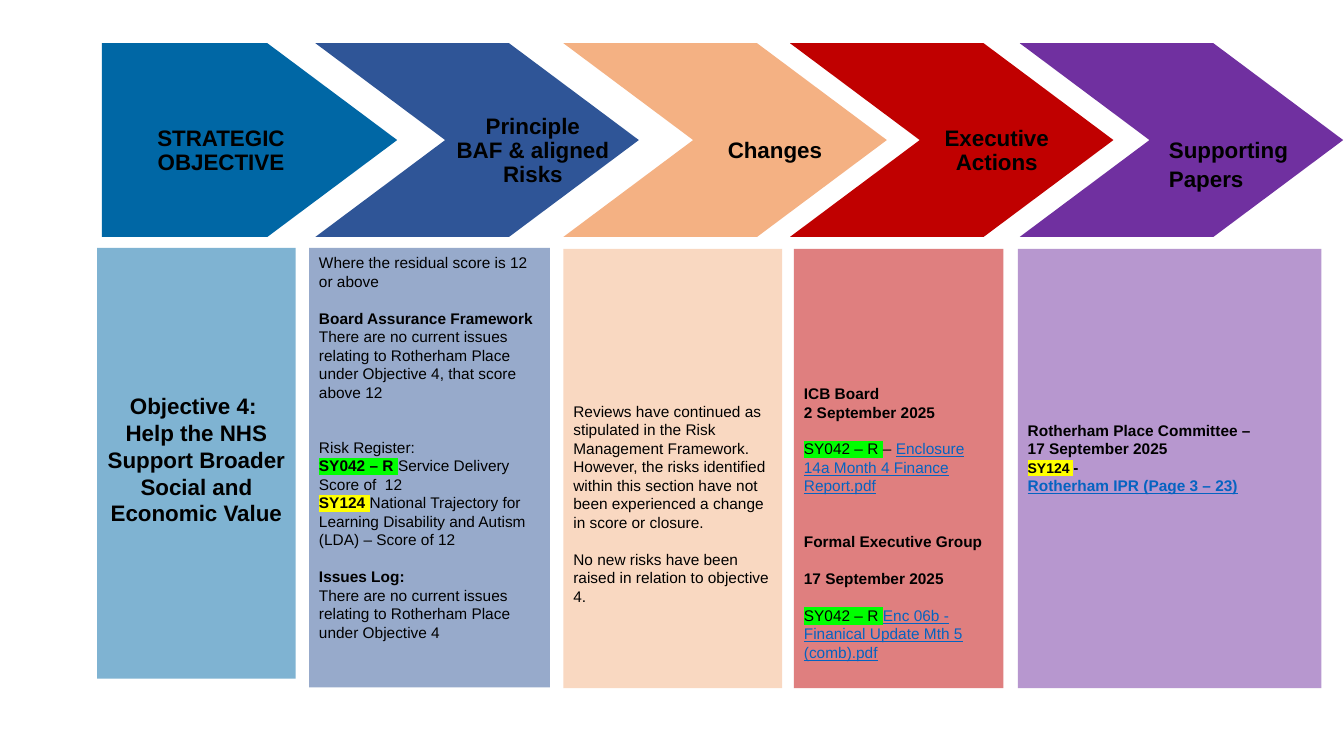
from lxml import etree
from pptx import Presentation
from pptx import util as u
from pptx.dml.color import RGBColor
from pptx.enum import shapes, text
from pptx.oxml.ns import qn

COLOURS = {
    "blue": "0067A5", "navy": "2F5597", "orange": "F4B183", "red": "C00000", "purple": "7030A0",
    "pale blue": "7FB3D2", "pale navy": "97AACB", "pale orange": "F9D8C1",
    "pale red": "DF7F7F", "pale purple": "B797CF",
    "black": "000000", "link": "0563C1", "green": "00FF00", "yellow": "FFFF00",
}
FONT = "Arial"

# Span styles
PLAIN = {}
BOLD = {"bold": True}
LINK = {"colour": "link", "underline": True}
BOLD_LINK = {**LINK, **BOLD}
GREEN = {"highlight": "green"}
GREEN_BOLD = {**GREEN, **BOLD}
YELLOW_BOLD = {"highlight": "yellow", **BOLD}
YELLOW_SMALL = {**YELLOW_BOLD, "size": 10}

# Arrow headings: left, width, colour, text centre x, text centre y, lines
ARROWS = [
    (2.57, 7.44, "blue", 5.57, 3.81, ["STRATEGIC", "OBJECTIVE"]),
    (7.95, 8.15, "navy", 13.43, 3.81, ["Principle", "BAF & aligned", "Risks"]),
    (14.2, 8.15, "orange", 19.53, 3.81, ["Changes"]),
    (19.91, 8.15, "red", 25.12, 3.81, ["Executive", "Actions"]),
    (25.7, 8.15, "purple", 31.11, 4.11, ["Supporting Papers"]),
]
ARROW_TOP, ARROW_HEIGHT, ARROW_POINT = 1.09, 4.88, 0.67

# Panels: left, top, width, height, colour, text top, paragraphs
# Each paragraph: blank lines before it, then its spans
PANELS = [
    (2.45, 6.25, 5.0, 10.85, "pale blue", 9.88, [
        (0, [("Objective 4:  Help the NHS Support Broader Social and Economic Value",
              {**BOLD, "size": 16})]),
    ]),
    (7.79, 6.25, 6.07, 11.07, "pale navy", 6.38, [
        (0, [("Where the residual score is 12 or above", PLAIN)]),
        (1, [("Board Assurance Framework", BOLD)]),
        (0, [("There are no current issues relating to Rotherham Place under Objective 4, "
              "that score above 12", PLAIN)]),
        (2, [("Risk Register:", PLAIN)]),
        (0, [("SY042 – R ", GREEN_BOLD), ("Service Delivery Score of  12", PLAIN)]),
        (0, [("SY124 ", YELLOW_BOLD),
             ("National Trajectory for Learning Disability and Autism (LDA) – Score of 12", PLAIN)]),
        (1, [("Issues Log:", BOLD)]),
        (0, [("There are no current issues relating to Rotherham Place under Objective 4", PLAIN)]),
    ]),
    (14.2, 6.27, 5.51, 11.07, "pale orange", 10.13, [
        (0, [("Reviews have continued as stipulated in the Risk Management Framework. However, "
              "the risks identified within this section have not been experienced a change in "
              "score or closure.", PLAIN)]),
        (1, [("No new risks have been raised in relation to objective 4.", PLAIN)]),
    ]),
    (20.01, 6.27, 5.28, 11.07, "pale red", 9.68, [
        (0, [("ICB Board", BOLD)]),
        (0, [("2 September 2025", BOLD)]),
        (1, [("SY042 – R ", GREEN), ("– ", PLAIN),
             ("Enclosure 14a Month 4 Finance Report.pdf", LINK)]),
        (2, [("Formal Executive Group", BOLD)]),
        (1, [("17 September 2025", BOLD)]),
        (1, [("SY042 – R ", GREEN), ("Enc 06b - Finanical Update Mth 5 (comb).pdf", LINK)]),
    ]),
    (25.65, 6.27, 7.65, 11.07, "pale purple", 10.6, [
        (0, [("Rotherham Place Committee –", BOLD)]),
        (0, [("17 September 2025", BOLD)]),
        (0, [("SY124 ", YELLOW_SMALL), ("-", BOLD)]),
        (0, [("Rotherham IPR (Page 3 – 23)", BOLD_LINK)]),
    ]),
]
BLANK_LINE = 13.2
SIDE_MARGIN = 0.25


def rgb(name):
    return RGBColor.from_string(COLOURS[name])


def add_span(para, words, size=11, bold=False, colour="black", underline=False, highlight=None):
    span = para.add_run()
    span.text = words
    font = span.font
    font.name, font.size, font.bold = FONT, u.Pt(size), bold
    font.color.rgb = rgb(colour)
    if underline:
        font.underline = True
    if highlight:
        mark = etree.Element(qn("a:highlight"))
        etree.SubElement(mark, qn("a:srgbClr")).set("val", COLOURS[highlight])
        font._element.find(qn("a:solidFill")).addnext(mark)


def write(frame, paragraphs, align=text.PP_ALIGN.LEFT, anchor=text.MSO_ANCHOR.TOP,
          side=0, top=0, leading=None):
    frame.word_wrap = True
    frame.vertical_anchor = anchor
    frame.margin_left = frame.margin_right = u.Cm(side)
    frame.margin_top, frame.margin_bottom = u.Cm(top), 0
    for index, (blanks, spans) in enumerate(paragraphs):
        para = frame.paragraphs[0] if index == 0 else frame.add_paragraph()
        para.alignment = align
        para.space_before = u.Pt(blanks * BLANK_LINE)
        if leading:
            para.line_spacing = u.Pt(leading)
        for words, style in spans:
            add_span(para, words, **style)


def add_block(page, kind, left, top, width, height, colour):
    block = page.shapes.add_shape(kind, u.Cm(left), u.Cm(top), u.Cm(width), u.Cm(height))
    block.shadow.inherit = False
    block.fill.solid()
    block.fill.fore_color.rgb = rgb(colour)
    block.line.fill.background()
    return block


def main():
    deck = Presentation()
    deck.slide_width, deck.slide_height = u.Cm(33.87), u.Cm(19.05)
    page = deck.slides.add_slide(deck.slide_layouts[6])

    # Arrow headings
    for index, (left, width, colour, centre_x, centre_y, lines) in enumerate(ARROWS):
        kind = shapes.MSO_SHAPE.CHEVRON if index else shapes.MSO_SHAPE.PENTAGON
        arrow = add_block(page, kind, left, ARROW_TOP, width, ARROW_HEIGHT, colour)
        arrow.adjustments[0] = ARROW_POINT
        last = index == len(ARROWS) - 1
        box_width, box_height = (3.3 if last else 4.4), 2
        box = page.shapes.add_textbox(u.Cm(centre_x - box_width / 2), u.Cm(centre_y - box_height / 2),
                                      u.Cm(box_width), u.Cm(box_height))
        write(box.text_frame, [(0, [(line, {**BOLD, "size": 16})]) for line in lines],
              align=text.PP_ALIGN.LEFT if last else text.PP_ALIGN.CENTER,
              anchor=text.MSO_ANCHOR.MIDDLE, leading=20.7 if last else 17.2)

    # Panels below the arrows
    for index, (left, top, width, height, colour, text_top, paragraphs) in enumerate(PANELS):
        panel = add_block(page, shapes.MSO_SHAPE.RECTANGLE, left, top, width, height, colour)
        write(panel.text_frame, paragraphs, side=SIDE_MARGIN, top=text_top - top,
              align=text.PP_ALIGN.LEFT if index else text.PP_ALIGN.CENTER)

    deck.save("out.pptx")


if __name__ == "__main__":
    main()
